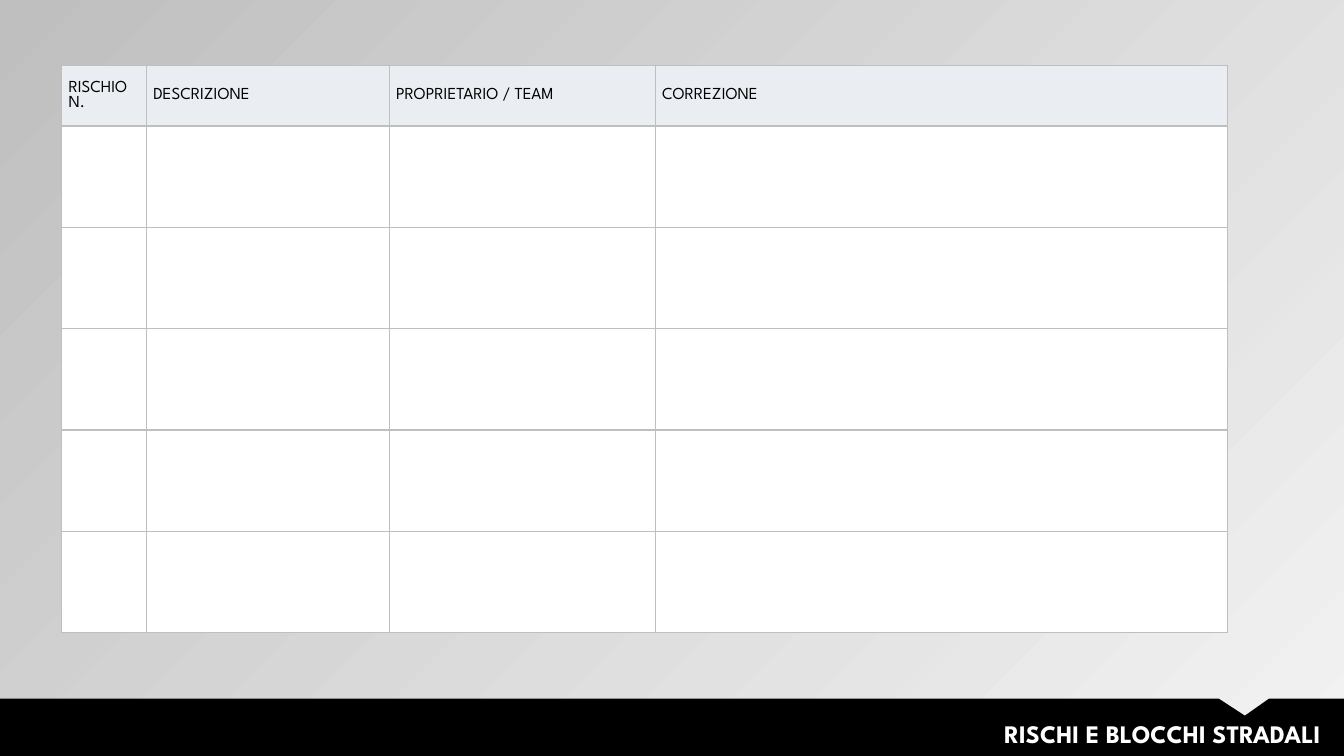
from lxml.etree import SubElement
from pptx import Presentation
from pptx.dml.color import RGBColor
from pptx.enum.text import MSO_ANCHOR, MSO_AUTO_SIZE, PP_ALIGN
from pptx.oxml.ns import qn
from pptx.util import Pt

TITLE = "RISCHI E BLOCCHI STRADALI"
HEADERS = ["RISCHIO N.", "DESCRIZIONE", "PROPRIETARIO / TEAM", "CORREZIONE"]
COL_WIDTHS = [60.5, 173.5, 190, 409]
BLANK_ROWS = 5
HEADER_H, ROW_H = 43.2, 72.4
TABLE_LEFT, TABLE_TOP = 44, 46.8

SLIDE_W, SLIDE_H = 960, 540
BAND_TOP = 499
NOTCH = [(870.5, BAND_TOP), (889.2, 511.2), (906.5, BAND_TOP)]

FONT = "League Spartan"
BLACK = RGBColor(0x00, 0x00, 0x00)
WHITE = RGBColor(0xFF, 0xFF, 0xFF)
HEADER_FILL = RGBColor(0xEA, 0xEE, 0xF3)
GRID = RGBColor(0xBF, 0xBF, 0xBF)
BACK_LIGHT = RGBColor(0xF2, 0xF2, 0xF2)

HEADER_FONT = {"name": FONT, "size": Pt(12), "bold": False}
TITLE_FONT = {"name": FONT, "size": Pt(18), "bold": True}
CELL_FORMAT = {"margin_left": Pt(5), "margin_right": Pt(5), "margin_top": 0,
               "margin_bottom": 0, "vertical_anchor": MSO_ANCHOR.MIDDLE}


def write(p, text, font, color):
    r = p.add_run()
    r.text = text
    for name, value in font.items():
        setattr(r.font, name, value)
    r.font.color.rgb = color


def add_borders(cell):
    tcPr = cell._tc.get_or_add_tcPr()
    for side in ("a:lnL", "a:lnR", "a:lnT", "a:lnB"):
        ln = SubElement(tcPr, qn(side), w=str(Pt(1)))
        SubElement(SubElement(ln, qn("a:solidFill")), qn("a:srgbClr"), val=str(GRID))


def format_cell(cell, color):
    for name, value in CELL_FORMAT.items():
        setattr(cell, name, value)
    add_borders(cell)  # borders precede the fill in the cell's XML
    cell.fill.solid()
    cell.fill.fore_color.rgb = color


def add_background(s):
    fill = s.background.fill
    fill.gradient()
    fill.gradient_angle = 135
    for stop, position, color in zip(fill.gradient_stops, (0, 1), (BACK_LIGHT, GRID)):
        stop.position = position
        stop.color.rgb = color


def add_risk_table(s):
    heights = [HEADER_H] + [ROW_H] * BLANK_ROWS
    table = s.shapes.add_table(
        len(heights), len(HEADERS), Pt(TABLE_LEFT), Pt(TABLE_TOP),
        Pt(sum(COL_WIDTHS)), Pt(sum(heights))).table
    table.first_row = table.horz_banding = False
    for column, width in zip(table.columns, COL_WIDTHS):
        column.width = Pt(width)
    for i, (row, height) in enumerate(zip(table.rows, heights)):
        row.height = Pt(height)
        for cell in row.cells:
            format_cell(cell, WHITE if i else HEADER_FILL)
    for cell, text in zip(table.rows[0].cells, HEADERS):
        write(cell.text_frame.paragraphs[0], text, HEADER_FONT, BLACK)


def add_title_band(s):
    outline = NOTCH + [(SLIDE_W, BAND_TOP), (SLIDE_W, SLIDE_H), (0, SLIDE_H)]
    builder = s.shapes.build_freeform(0, Pt(BAND_TOP))
    builder.add_line_segments([(Pt(x), Pt(y)) for x, y in outline], close=True)
    sp = builder.convert_to_shape()
    sp.shadow.inherit = False
    sp.fill.solid()
    sp.fill.fore_color.rgb = BLACK
    sp.line.fill.background()

    tf = s.shapes.add_textbox(Pt(298), Pt(509.8), Pt(652.4), Pt(28.8)).text_frame
    tf.word_wrap = True
    tf.auto_size = MSO_AUTO_SIZE.SHAPE_TO_FIT_TEXT
    p = tf.paragraphs[0]
    p.alignment = PP_ALIGN.RIGHT
    write(p, TITLE, TITLE_FONT, WHITE)


def main():
    prs = Presentation()
    prs.slide_width, prs.slide_height = Pt(SLIDE_W), Pt(SLIDE_H)
    s = prs.slides.add_slide(prs.slide_layouts[6])
    add_background(s)
    add_risk_table(s)
    add_title_band(s)
    prs.save("out.pptx")


if __name__ == "__main__":
    main()
